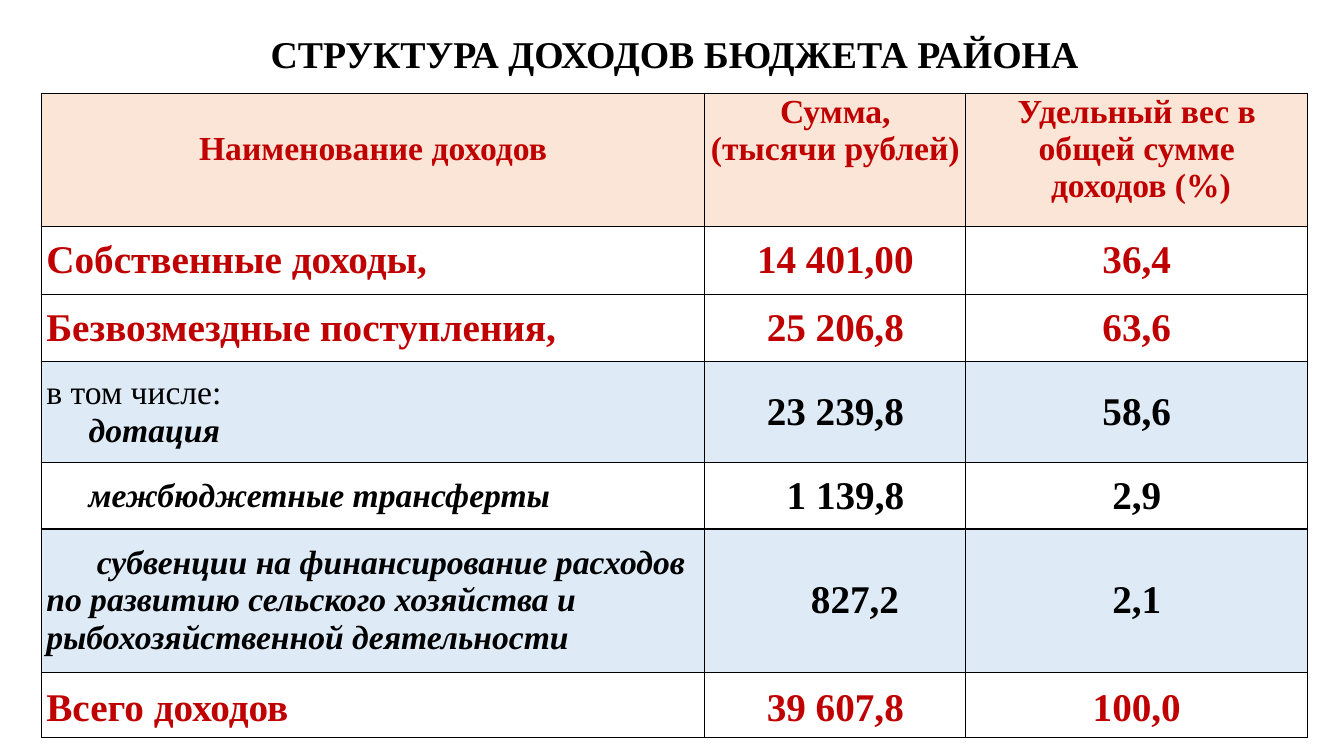
import dataclasses

import lxml.etree
import pptx
import pptx.dml.color
import pptx.enum.text
import pptx.oxml.ns
import pptx.util

ALIGN = pptx.enum.text.PP_ALIGN
ANCHOR = pptx.enum.text.MSO_ANCHOR
WIDTH, HEIGHT = 13.33, 7.5


@dataclasses.dataclass(frozen=True)
class Theme:
    font: str = "Times New Roman"
    black: str = "000000"
    red: str = "C00000"
    peach: str = "FBE5D6"
    blue: str = "DEEBF7"
    white: str = "FFFFFF"
    title: float = 27
    large: float = 28
    medium: float = 24
    border: float = 1
    inset: float = 0.05


THEME = Theme()
TITLE_BOX = (0.94, 0.22, 11.5, 0.68)
TABLE_BOX = (0.41, 0.93, 12.56, 6.39)
COLUMN_SHARES = (6.58, 2.59, 3.39)
ROW_SHARES = (1.32, 0.67, 0.67, 1, 0.66, 1.42, 0.65)

HEADINGS = (
    ("Наименование доходов",),
    ("Сумма,", "(тысячи рублей)"),
    ("Удельный вес в", "общей сумме", " доходов (%)"),
)
HEADING_OFFSETS = (0.37, 0, 0)

TOTALS = {"size": THEME.large, "color": THEME.red, "bold": True}
AMOUNT = {"size": THEME.large, "color": THEME.black, "bold": True}
HEADING = {"size": THEME.medium, "color": THEME.red, "bold": True}
PLAIN = {"size": THEME.medium, "color": THEME.black, "bold": False}
DETAIL = {"size": THEME.medium, "color": THEME.black, "bold": True, "italic": True}


@dataclasses.dataclass(frozen=True)
class Income:
    names: tuple
    amount: str
    percent: str
    style: dict
    fill: str = THEME.white
    shift: float = 0
    spacing: float = 1.0


INCOMES = (
    Income((("Собственные доходы,", TOTALS, 0),), "14 401,00", "36,4", TOTALS),
    Income((("Безвозмездные поступления,", TOTALS, 0),), "25 206,8", "63,6", TOTALS),
    Income((("в том числе:", PLAIN, 0), ("дотация", DETAIL, 0.42)),
           "23 239,8", "58,6", AMOUNT, THEME.blue),
    Income((("межбюджетные трансферты", DETAIL, 0.42),),
           "1 139,8", "2,9", AMOUNT, shift=0.2),
    Income((("субвенции на финансирование расходов по развитию сельского "
             "хозяйства и рыбохозяйственной деятельности", DETAIL, 0.5),),
           "827,2", "2,1", AMOUNT, THEME.blue, shift=0.39),
    Income((("Всего доходов", TOTALS, 0),), "39 607,8", "100,0", TOTALS, spacing=1.15),
)


def rgb(value):
    return pptx.dml.color.RGBColor.from_string(value)


def set_attributes(target, values):
    for name, value in values.items():
        setattr(target, name, value)


def write(frame, lines, alignment, spacing):
    for index, (text, style, indent) in enumerate(lines):
        paragraph = frame.add_paragraph() if index else frame.paragraphs[0]
        set_attributes(paragraph, {"alignment": alignment, "line_spacing": spacing})
        if indent:
            properties = paragraph._p.get_or_add_pPr()
            properties.set("indent", str(pptx.util.Inches(indent)))
        run = paragraph.add_run()
        run.text = text
        values = {"name": THEME.font, **style, "size": pptx.util.Pt(style["size"])}
        run.font.color.rgb = rgb(values.pop("color"))
        set_attributes(run.font, values)


def add_borders(cell):
    properties = cell._tc.get_or_add_tcPr()
    qualify = pptx.oxml.ns.qn
    for side in ("L", "R", "T", "B"):
        line = lxml.etree.SubElement(
            properties, qualify(f"a:ln{side}"), w=str(pptx.util.Pt(THEME.border)))
        solid = lxml.etree.SubElement(line, qualify("a:solidFill"))
        lxml.etree.SubElement(solid, qualify("a:srgbClr"), val=THEME.black)


def fill_cell(cell, lines, fill, alignment=ALIGN.CENTER, anchor=ANCHOR.MIDDLE,
              spacing=1.0, left=0, top=0):
    set_attributes(cell, {
        "margin_left": pptx.util.Inches(THEME.inset + left),
        "margin_right": pptx.util.Inches(THEME.inset),
        "margin_top": pptx.util.Inches(top),
        "margin_bottom": 0,
        "vertical_anchor": anchor,
    })
    add_borders(cell)
    cell.fill.solid()
    cell.fill.fore_color.rgb = rgb(fill)
    write(cell.text_frame, lines, alignment, spacing)


def add_title(slide, box):
    title = slide.shapes.title
    lengths = map(pptx.util.Inches, box)
    set_attributes(title, dict(zip(("left", "top", "width", "height"), lengths)))
    set_attributes(title.text_frame, {
        "vertical_anchor": ANCHOR.MIDDLE,
        "word_wrap": True,
        "auto_size": pptx.enum.text.MSO_AUTO_SIZE.NONE,
    })
    style = {"size": THEME.title, "color": THEME.black, "bold": True}
    write(title.text_frame, [("СТРУКТУРА ДОХОДОВ БЮДЖЕТА РАЙОНА", style, 0)],
          ALIGN.CENTER, 0.9)


def add_income_table(slide, box):
    table = slide.shapes.add_table(
        len(ROW_SHARES), len(COLUMN_SHARES), *map(pptx.util.Inches, box)).table
    set_attributes(table, {"first_row": False, "horz_banding": False})
    for column, share in zip(table.columns, COLUMN_SHARES):
        column.width = pptx.util.Inches(box[2] * share / sum(COLUMN_SHARES))
    for row, share in zip(table.rows, ROW_SHARES):
        row.height = pptx.util.Inches(box[3] * share / sum(ROW_SHARES))

    for index, (texts, offset) in enumerate(zip(HEADINGS, HEADING_OFFSETS)):
        fill_cell(table.cell(0, index), [(text, HEADING, 0) for text in texts],
                  THEME.peach, anchor=ANCHOR.TOP, top=offset)

    for index, income in enumerate(INCOMES, 1):
        name, amount, percent = (table.cell(index, column) for column in range(3))
        fill_cell(name, income.names, income.fill, ALIGN.LEFT, spacing=income.spacing)
        fill_cell(amount, [(income.amount, income.style, 0)], income.fill,
                  spacing=income.spacing, left=income.shift)
        fill_cell(percent, [(income.percent, income.style, 0)], income.fill,
                  spacing=income.spacing)


def main():
    presentation = pptx.Presentation()
    set_attributes(presentation, {
        "slide_width": pptx.util.Inches(WIDTH),
        "slide_height": pptx.util.Inches(HEIGHT),
    })
    slide = presentation.slides.add_slide(presentation.slide_layouts[5])
    add_title(slide, TITLE_BOX)
    add_income_table(slide, TABLE_BOX)
    presentation.save("out.pptx")


if __name__ == "__main__":
    main()
